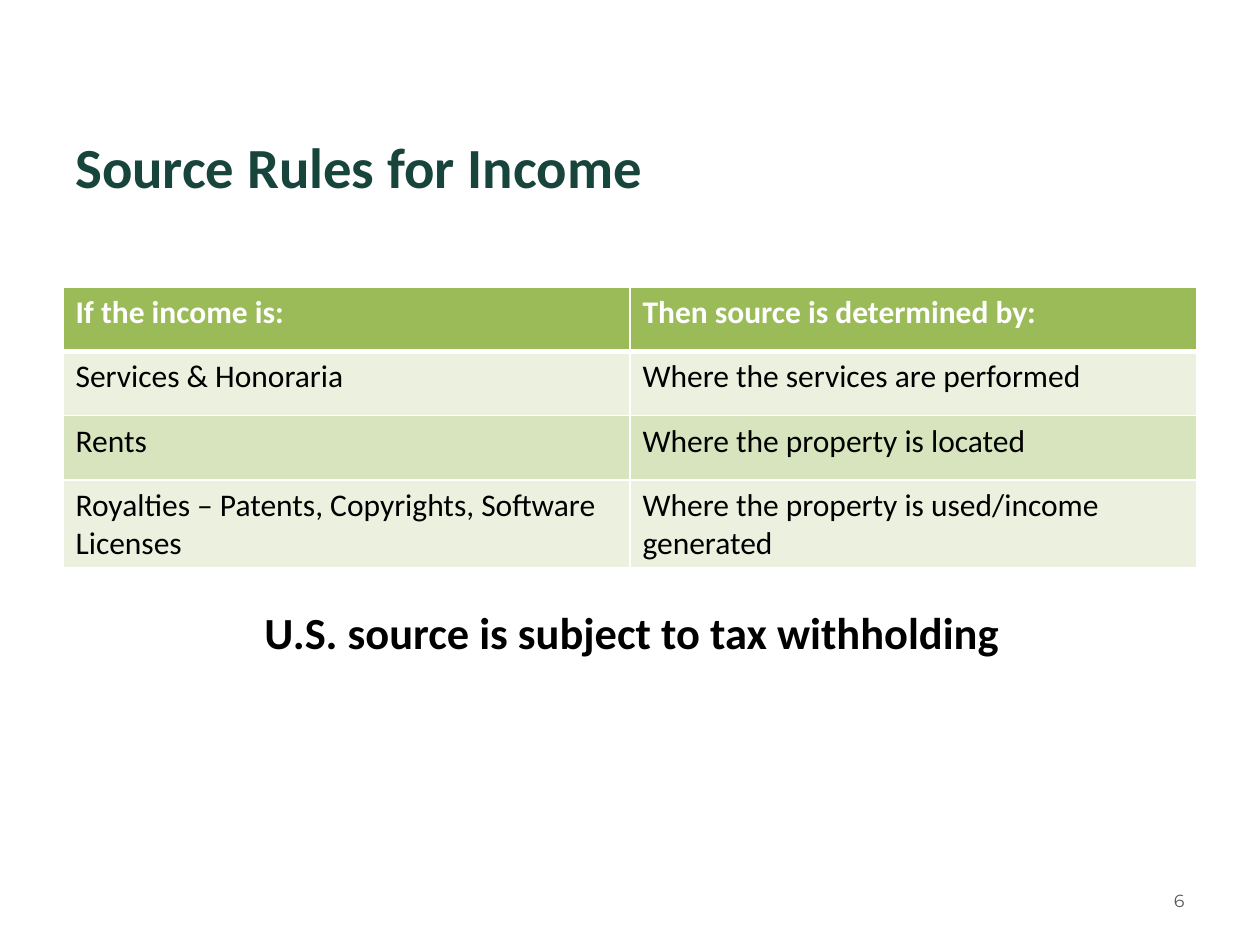
from lxml import etree
from pptx import Presentation
from pptx.dml.color import RGBColor
from pptx.enum import text
from pptx.oxml import ns
from pptx.util import Inches, Pt

WHITE = RGBColor(0xFF, 0xFF, 0xFF)
BLACK = RGBColor(0, 0, 0)
GRAY = RGBColor(0x59, 0x59, 0x59)
DARK_GREEN = RGBColor(0x18, 0x45, 0x3B)
HEADER_GREEN = RGBColor(0x9B, 0xBB, 0x59)
BANDS = [RGBColor(0xEB, 0xF1, 0xDE), RGBColor(0xD7, 0xE4, 0xBD)]

RULES = [
    ("If the income is:", "Then source is determined by:"),
    ("Services & Honoraria", "Where the services are performed"),
    ("Rents", "Where the property is located"),
    ("Royalties – Patents, Copyrights, Software Licenses",
     "Where the property is used/income generated"),
]


def write(frame, words, size, color=BLACK, bold=False, font="Calibri",
          align=text.PP_ALIGN.LEFT):
    """Put one formatted paragraph into a text frame."""
    frame.word_wrap = True
    paragraph = frame.paragraphs[0]
    paragraph.alignment = align
    run = paragraph.add_run()
    run.text = words
    run.font.name = font
    run.font.size = Pt(size)
    run.font.bold = bold
    run.font.color.rgb = color


def add_line(slide, box, words, anchor=text.MSO_ANCHOR.TOP, **style):
    """Place a line of text in a box."""
    frame = slide.shapes.add_textbox(*map(Inches, box)).text_frame
    frame.vertical_anchor = anchor
    write(frame, words, **style)


def set_borders(cell, **widths):
    """Draw white cell borders with widths in points, keyed by side."""
    properties = cell._tc.get_or_add_tcPr()
    for side, width in widths.items():
        border = etree.SubElement(properties, ns.qn(f"a:ln{side}"), w=str(Pt(width)))
        fill = etree.SubElement(border, ns.qn("a:solidFill"))
        etree.SubElement(fill, ns.qn("a:srgbClr"), val=str(WHITE))


def add_rules_table(slide, box, rules):
    """Build the income source table with a header and banded rows."""
    table = slide.shapes.add_table(len(rules), len(rules[0]), *map(Inches, box)).table
    for index, rule in enumerate(rules):
        header = index == 0
        for column, words in enumerate(rule):
            cell = table.cell(index, column)
            set_borders(cell, L=1, R=1, T=3 if index == 1 else 1, B=3 if header else 1)
            cell.fill.solid()
            cell.fill.fore_color.rgb = HEADER_GREEN if header else BANDS[(index - 1) % 2]
            write(cell.text_frame, words, size=18, bold=header,
                  color=WHITE if header else BLACK)


def build_slide(deck):
    """Add the source rules slide."""
    slide = deck.slides.add_slide(deck.slide_layouts[6])
    add_line(slide, (0.5, 1, 9, 0.64), "Source Rules for Income",
             size=32.4, color=DARK_GREEN, bold=True)
    add_rules_table(slide, (0.5, 2.28, 9, 2.04), RULES)
    add_line(slide, (7.17, 6.95, 2.33, 0.4), "6", anchor=text.MSO_ANCHOR.MIDDLE,
             size=10, color=GRAY, font="Montserrat", align=text.PP_ALIGN.RIGHT)
    add_line(slide, (2, 4.75, 6.08, 0.64), "U.S. source is subject to tax withholding",
             size=25.4, bold=True)


def main():
    """Create and save the deck."""
    deck = Presentation()
    deck.slide_width, deck.slide_height = Inches(10), Inches(7.5)
    build_slide(deck)
    deck.save("out.pptx")


if __name__ == "__main__":
    main()
